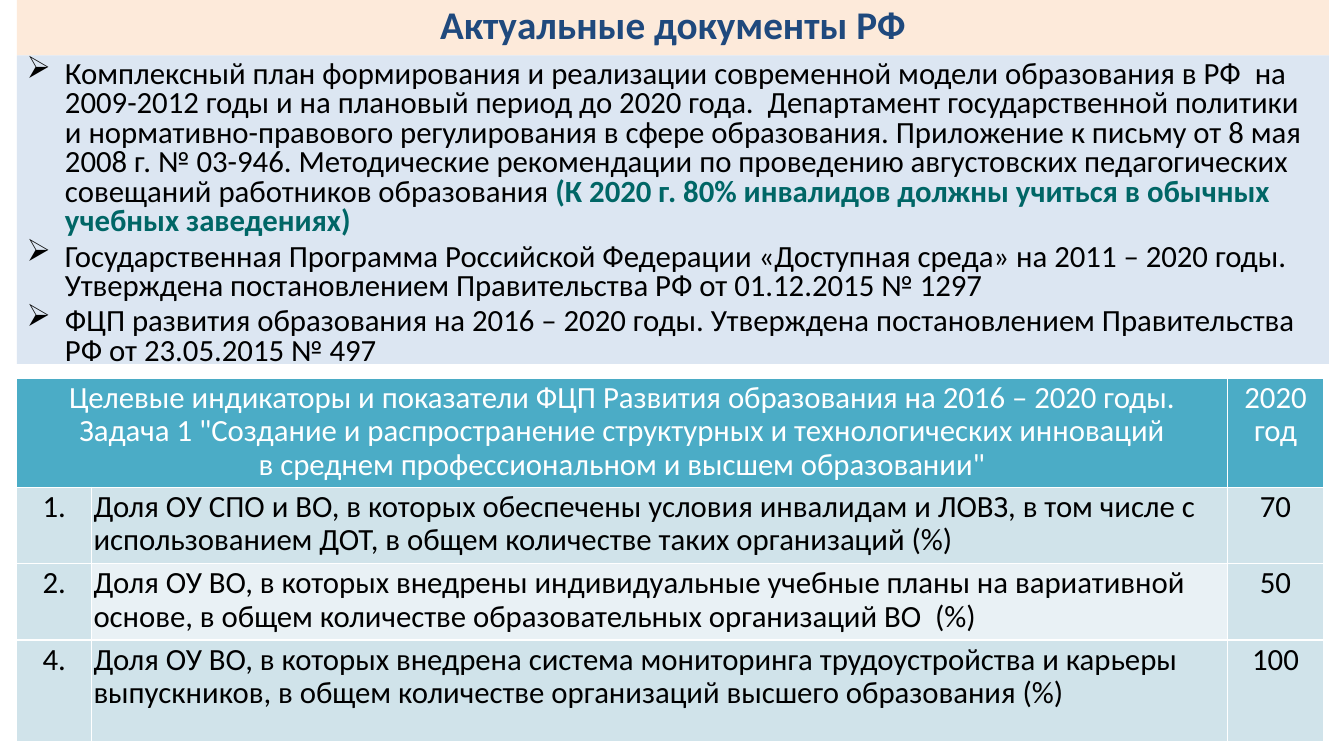
from pptx import Presentation
from pptx import util as u
from pptx.dml import color
from pptx.enum import shapes, text
from pptx.oxml import parse_xml
from pptx.oxml import ns

COLORS = {
    "peach": "FDEADA", "navy": "1F497D", "pale_blue": "DCE6F2",
    "black": "000000", "teal": "006666", "white": "FFFFFF",
    "header": "4BACC6", "band": "D0E3EA", "light_band": "E9F1F5",
}
FONT = "Calibri"
COLUMNS, ROWS = 80, 45
LEFT, CENTER = text.PP_ALIGN.LEFT, text.PP_ALIGN.CENTER

DOCUMENTS = [
    [("Комплексный план формирования и реализации современной модели образования "
      "в РФ  на 2009-2012 годы и на плановый период до 2020 года.  Департамент "
      "государственной политики и нормативно-правового регулирования в сфере "
      "образования. Приложение к письму от 8 мая 2008 г. № 03-946. Методические "
      "рекомендации по проведению августовских педагогических совещаний "
      "работников образования ", "black", False),
     ("(К 2020 г. 80% инвалидов должны учиться в обычных учебных заведениях)",
      "teal", True)],
    [("Государственная Программа Российской Федерации «Доступная среда» на "
      "2011 – 2020 годы. Утверждена постановлением Правительства РФ от "
      "01.12.2015 № 1297", "black", False)],
    [("ФЦП развития образования на 2016 – 2020 годы. Утверждена постановлением "
      "Правительства РФ от 23.05.2015 № 497", "black", False)],
]
HEADINGS = [
    ["Целевые индикаторы и показатели ФЦП Развития образования на 2016 – 2020 годы.",
     "Задача 1 \"Создание и распространение структурных и технологических инноваций",
     "в среднем профессиональном и высшем образовании\""],
    None,
    ["2020 год"],
]
INDICATORS = [
    ("1.", "Доля ОУ СПО и ВО, в которых обеспечены условия инвалидам и ЛОВЗ, в том "
     "числе с использованием ДОТ, в общем количестве таких организаций (%)", "70"),
    ("2.", "Доля ОУ ВО, в которых внедрены индивидуальные учебные планы на "
     "вариативной основе, в общем количестве образовательных организаций ВО  (%)", "50"),
    ("4.", "Доля ОУ ВО, в которых внедрена система мониторинга трудоустройства и "
     "карьеры выпускников, в общем количестве организаций высшего образования (%)", "100"),
]


def apply(target, values):
    """Set every attribute in a dict of format values."""
    for name, value in values.items():
        setattr(target, name, value)


class Page:
    """Holds the style and the current slide, and draws elements on its grid."""

    def __init__(self, deck):
        """Add a title-only slide to the deck."""
        self.slide = deck.slides.add_slide(deck.slide_layouts[5])
        self.column = deck.slide_width / COLUMNS
        self.row = deck.slide_height / ROWS

    def across(self, count):
        """Return the length of a number of grid columns."""
        return u.Emu(round(count * self.column))

    def down(self, count):
        """Return the length of a number of grid rows."""
        return u.Emu(round(count * self.row))

    def place(self, left, top, width, height):
        """Turn a grid area into slide lengths."""
        return (self.across(left), self.down(top), self.across(width), self.down(height))

    def fill(self, target, name):
        """Fill a shape or cell with a named colour."""
        target.fill.solid()
        target.fill.fore_color.rgb = color.RGBColor.from_string(COLORS[name])

    def compose(self, para, spans, size, **layout):
        """Put styled spans into a paragraph."""
        apply(para, layout)
        for words, name, bold in spans:
            span = para.add_run()
            span.text = words
            apply(span.font, {"name": FONT, "size": u.Pt(size), "bold": bold})
            span.font.color.rgb = color.RGBColor.from_string(COLORS[name])

    def paragraphs(self, frame, count):
        """Return the wanted number of paragraphs of a text frame."""
        return [frame.paragraphs[0]] + [frame.add_paragraph() for _ in range(count - 1)]

    def title(self, words, area):
        """Move and format the title placeholder."""
        box = self.slide.shapes.title
        apply(box, dict(zip(("left", "top", "width", "height"), self.place(*area))))
        self.fill(box, "peach")
        apply(box.text_frame, {"vertical_anchor": text.MSO_ANCHOR.MIDDLE,
                               "word_wrap": True, "auto_size": text.MSO_AUTO_SIZE.NONE})
        self.compose(box.text_frame.paragraphs[0], [(words, "navy", True)], 28,
                     alignment=CENTER, line_spacing=0.8)

    def bullets(self, items, area):
        """Draw a filled panel of arrow-bulleted paragraphs."""
        box = self.slide.shapes.add_shape(shapes.MSO_SHAPE.RECTANGLE, *self.place(*area))
        box.shadow.inherit = False
        self.fill(box, "pale_blue")
        box.line.fill.background()
        apply(box.text_frame, {"word_wrap": True, "vertical_anchor": text.MSO_ANCHOR.TOP})
        indent = self.across(2.28)
        for para, spans in zip(self.paragraphs(box.text_frame, len(items)), items):
            self.compose(para, spans, 22, alignment=LEFT, line_spacing=0.8,
                         space_before=u.Pt(2), space_after=u.Pt(2))
            props = para._p.get_or_add_pPr()
            props.set("marL", str(indent))
            props.set("indent", str(-indent))
            props.append(parse_xml(f'<a:buChar {ns.nsdecls("a")} char="➢"/>'))

    def cell(self, cell, lines, fill, ink, alignment):
        """Format one table cell with white borders."""
        props = cell._tc.get_or_add_tcPr()
        for side in ("lnL", "lnR", "lnT", "lnB"):
            props.append(parse_xml(
                f'<a:{side} {ns.nsdecls("a")} w="{u.Pt(1)}"><a:solidFill>'
                f'<a:srgbClr val="{COLORS["white"]}"/></a:solidFill></a:{side}>'))
        self.fill(cell, fill)
        side, edge = self.across(0.12), self.down(0.18)
        apply(cell, {"margin_left": side, "margin_right": side,
                     "margin_top": edge, "margin_bottom": edge})
        for para, line in zip(self.paragraphs(cell.text_frame, len(lines)), lines):
            self.compose(para, [(line, ink, False)], 22, alignment=alignment,
                         line_spacing=0.9)

    def table(self, left, top, widths, heights):
        """Draw the table of target indicators."""
        area = self.place(left, top, sum(widths), sum(heights))
        grid = self.slide.shapes.add_table(len(heights), len(widths), *area).table
        for column, width in zip(grid.columns, widths):
            column.width = self.across(width)
        for row, height in zip(grid.rows, heights):
            row.height = self.down(height)
        grid.cell(0, 0).merge(grid.cell(0, 1))
        for index, lines in enumerate(HEADINGS):
            self.cell(grid.cell(0, index), lines or [], "header", "white", CENTER)
        for row, values in enumerate(INDICATORS, 1):
            for index, words in enumerate(values):
                fill = "light_band" if (row, index) == (2, 1) else "band"
                self.cell(grid.cell(row, index), [words], fill, "black",
                          LEFT if index == 1 else CENTER)


def main():
    """Build and save the slide."""
    deck = Presentation()
    apply(deck, {"slide_width": u.Inches(13.33), "slide_height": u.Inches(7.5)})
    page = Page(deck)
    page.title("Актуальные документы РФ", (1, 0, 78.1, 3.3))
    page.bullets(DOCUMENTS, (1, 3.3, 78.1, 18.36))
    page.table(1, 22.5, (4.45, 67.6, 5.75), (6.5, 4.55, 4.55, 6.05))
    deck.save("out.pptx")


if __name__ == "__main__":
    main()
